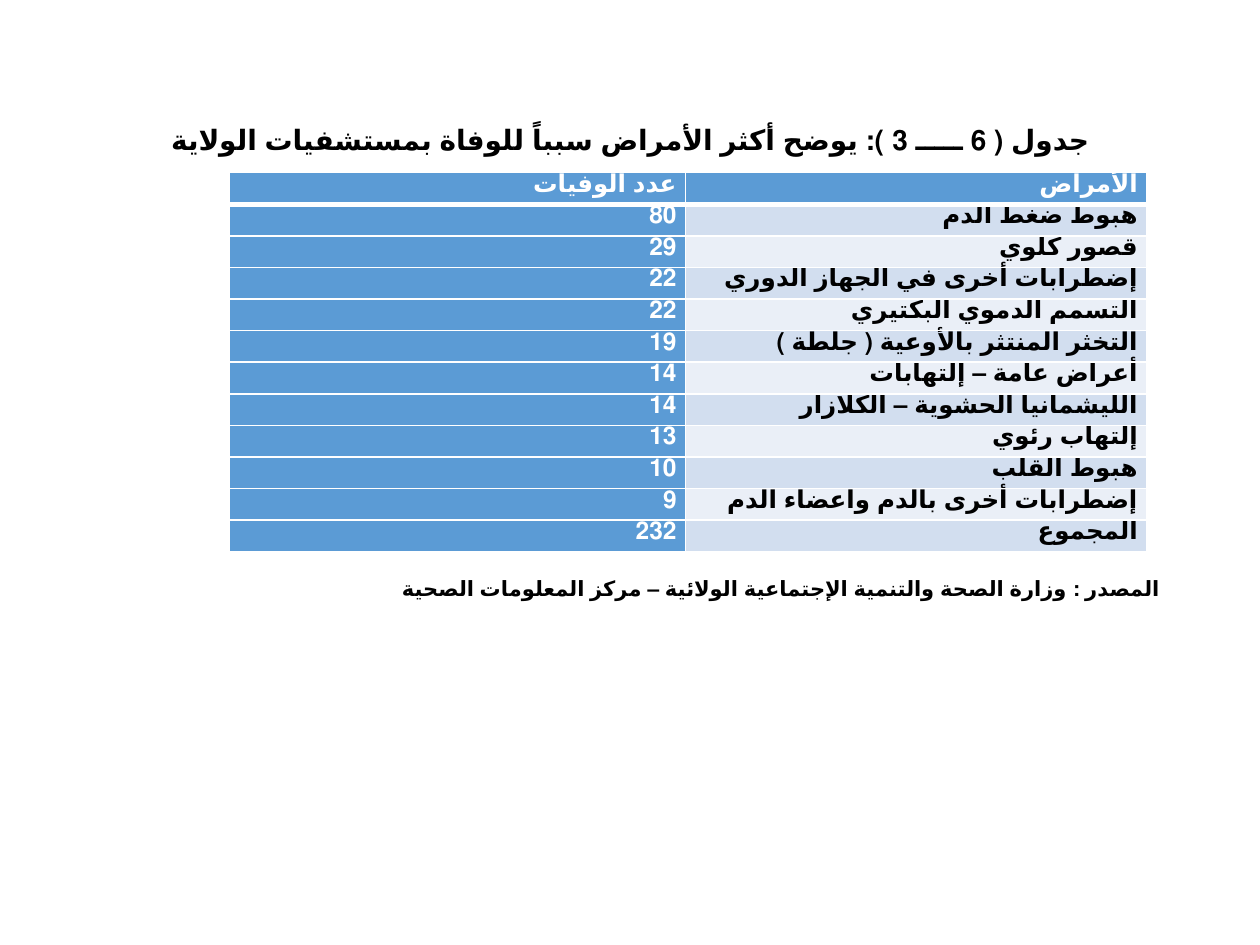
from dataclasses import dataclass

import pptx
import pptx.dml.color
import pptx.enum.text
import pptx.oxml
import pptx.oxml.ns
import pptx.util
from pptx.util import Inches

WHITE, BLACK, BLUE = "FFFFFF", "000000", "5B9BD5"
BANDS = ("D2DEEF", "EAEFF7")
ALIGN = pptx.enum.text.PP_ALIGN
MIDDLE = pptx.enum.text.MSO_ANCHOR.MIDDLE


@dataclass
class Disease:
    name: str
    deaths: str


@dataclass
class Caption:
    text: str
    top: float
    height: float
    size: int
    alignment: ALIGN


HEADER = Disease("الأمراض", "عدد الوفيات")
DISEASES = [
    Disease("هبوط ضغط الدم", "80"),
    Disease("قصور كلوي", "29"),
    Disease("إضطرابات أخرى في الجهاز الدوري", "22"),
    Disease("التسمم الدموي البكتيري", "22"),
    Disease("التخثر المنتثر بالأوعية ( جلطة )", "19"),
    Disease("أعراض عامة – إلتهابات", "14"),
    Disease("الليشمانيا الحشوية – الكلازار", "14"),
    Disease("إلتهاب رئوي", "13"),
    Disease("هبوط القلب", "10"),
    Disease("إضطرابات أخرى بالدم واعضاء الدم", "9"),
    Disease("المجموع", "232"),
]
CAPTIONS = [
    Caption("جدول ( 6 ـــــ 3 ): يوضح أكثر الأمراض سبباً للوفاة بمستشفيات الولاية",
            0.4, 1.45, 16, ALIGN.CENTER),
    Caption("المصدر : وزارة الصحة والتنمية الإجتماعية الولائية – مركز المعلومات الصحية",
            4.48, 0.4, 12, ALIGN.RIGHT),
]


def rgb(value: str) -> pptx.dml.color.RGBColor:
    return pptx.dml.color.RGBColor.from_string(value)


def write(frame, text: str, size: int, color: str, alignment: ALIGN, spacing: float) -> None:
    paragraph = frame.paragraphs[0]
    paragraph.alignment = alignment
    paragraph.line_spacing = spacing
    paragraph._p.get_or_add_pPr().set("rtl", "1")
    run = paragraph.add_run()
    run.text = text
    run.font.name = "Calibri"
    run.font.size = pptx.util.Pt(size)
    run.font.bold = True
    run.font.color.rgb = rgb(color)
    properties = run._r.get_or_add_rPr()
    properties.set("lang", "ar-SA")
    properties.append(pptx.oxml.parse_xml(
        f'<a:cs {pptx.oxml.ns.nsdecls("a")} typeface="Helvetica"/>'))


def add_caption(slide, caption: Caption) -> None:
    shape = slide.shapes.add_textbox(
        Inches(0.69), Inches(caption.top), Inches(8.62), Inches(caption.height))
    shape.text_frame.word_wrap = True
    shape.text_frame.vertical_anchor = MIDDLE
    write(shape.text_frame, caption.text, caption.size, BLACK, caption.alignment, 0.9)


def set_borders(cell, bottom: int) -> None:
    properties = cell._tc.get_or_add_tcPr()
    widths = {"lnL": 1, "lnR": 1, "lnT": 1, "lnB": bottom}
    for index, (side, width) in enumerate(widths.items()):
        properties.insert(index, pptx.oxml.parse_xml(
            f'<a:{side} {pptx.oxml.ns.nsdecls("a")} w="{pptx.util.Pt(width)}">'
            f'<a:solidFill><a:srgbClr val="{WHITE}"/></a:solidFill></a:{side}>'))


def fill_cell(cell, text: str, fill: str, color: str, bottom: int) -> None:
    cell.margin_left = cell.margin_right = Inches(0.07)
    cell.margin_top = cell.margin_bottom = 0
    cell.fill.solid()
    cell.fill.fore_color.rgb = rgb(fill)
    set_borders(cell, bottom)
    write(cell.text_frame, text, 14, color, ALIGN.RIGHT, 1.07)


def add_disease_table(slide) -> None:
    rows = [HEADER, *DISEASES]
    table = slide.shapes.add_table(
        len(rows), 2, Inches(1.82), Inches(1.37), Inches(7.28), Inches(3.01)).table
    for column, width in zip(table.columns, (3.62, 3.66)):
        column.width = Inches(width)
    for index, disease in enumerate(rows):
        is_header = index == 0
        bottom = 3 if is_header else 1
        name_fill = BLUE if is_header else BANDS[(index - 1) % 2]
        name_color = WHITE if is_header else BLACK
        fill_cell(table.cell(index, 0), disease.deaths, BLUE, WHITE, bottom)
        fill_cell(table.cell(index, 1), disease.name, name_fill, name_color, bottom)


def main() -> None:
    """Build the slide on the leading causes of hospital deaths."""
    presentation = pptx.Presentation()
    presentation.slide_width = Inches(10)
    presentation.slide_height = Inches(7.5)
    slide = presentation.slides.add_slide(presentation.slide_layouts[6])
    for caption in CAPTIONS:
        add_caption(slide, caption)
    add_disease_table(slide)
    presentation.save("out.pptx")


if __name__ == "__main__":
    main()
